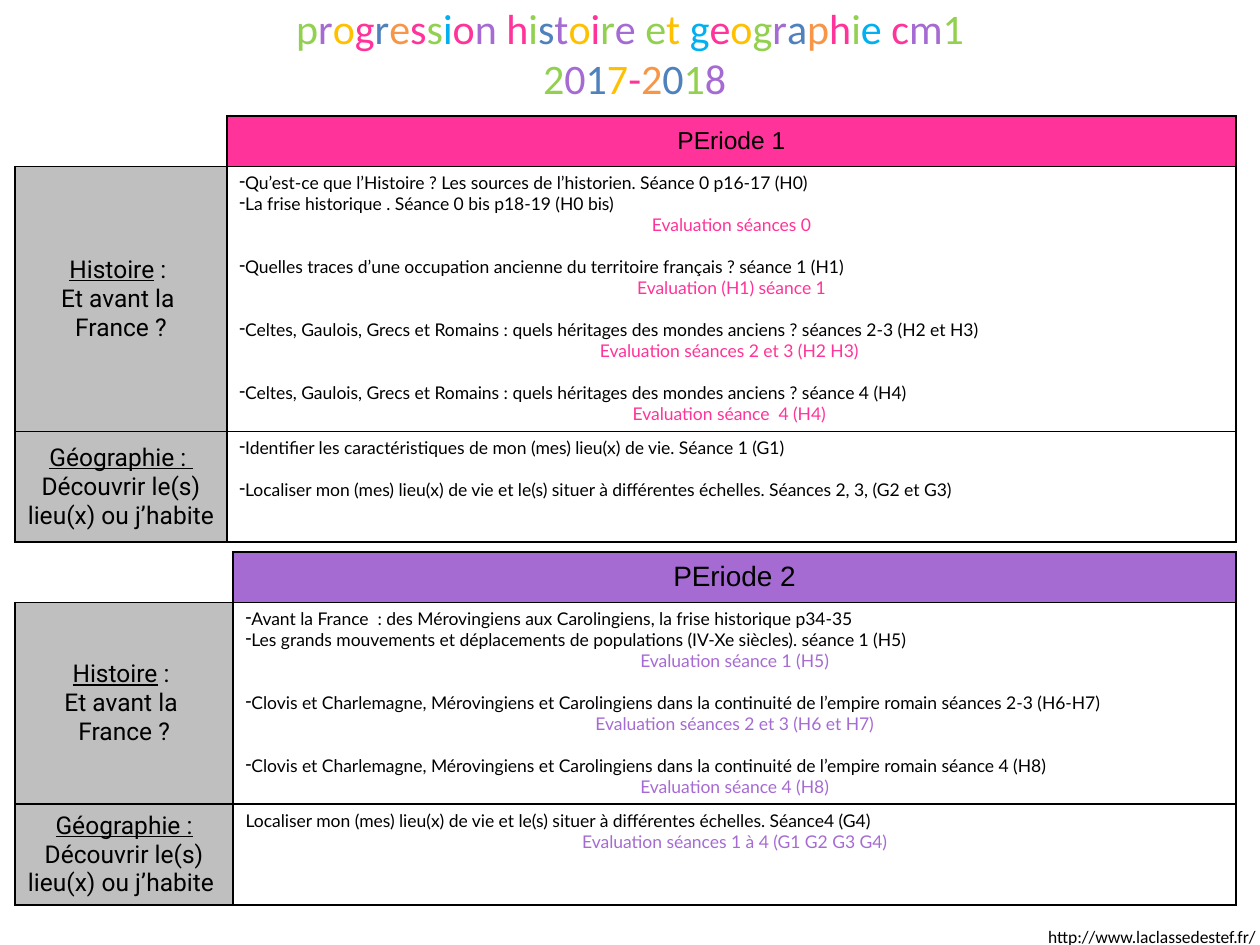
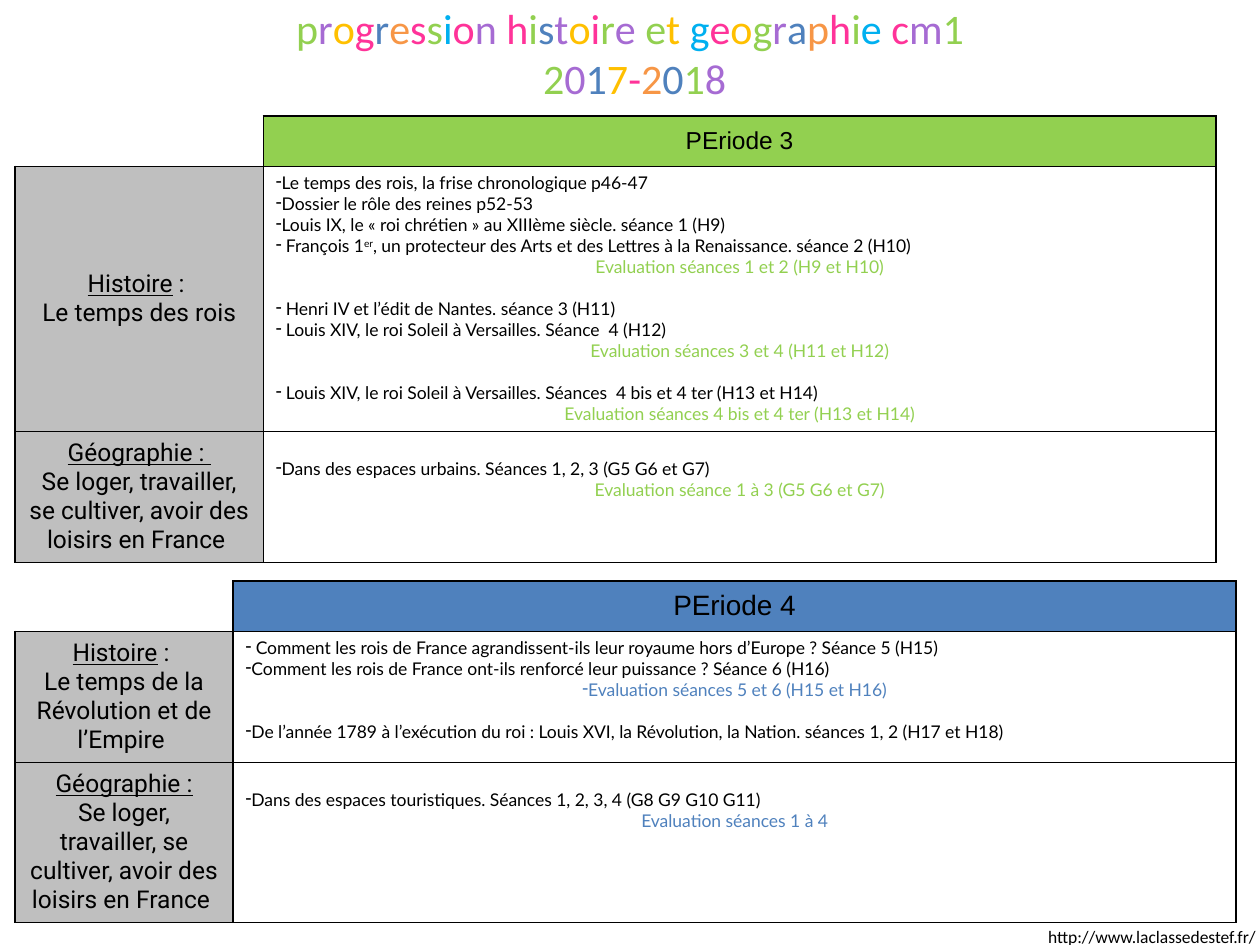
from dataclasses import dataclass

from lxml import etree
from pptx import Presentation
from pptx.dml.color import RGBColor
from pptx.enum.text import MSO_ANCHOR, PP_ALIGN
from pptx.oxml.ns import qn
from pptx.util import Emu, Inches, Pt

CENTER, LEFT = PP_ALIGN.CENTER, PP_ALIGN.LEFT
MIDDLE, TOP = MSO_ANCHOR.MIDDLE, MSO_ANCHOR.TOP

WIDTH, HEIGHT = Inches(10), Inches(7.5)
COLUMNS, ROWS = 100, 75

BLACK, GREY = "000000", "BFBFBF"
PINK, VIOLET, GREEN, BLUE = "FF3399", "A66BD3", "92D050", "4F81BD"
LETTER_COLOURS = {"P": PINK, "V": VIOLET, "G": GREEN, "B": BLUE,
                  "Y": "FFC000", "O": "F79646", "C": "00B0F0", " ": BLACK}

# Each title line with the colour code of every letter below it
TITLE = (
    ("progression histoire et geographie cm1",
     "GVYPBOPGCPV PGBVYPGV GY CPYGVBOPGC PVG"),
    (" 2017-2018",
     " GVBYPOBGV"),
)
FOOTER = "http://www.laclassedestef.fr/"

TABLE_LEFT = 1.2
HEADER_ROWS = 3.9
LESSON_SIZE = 10
LESSON_LINE = Pt(12)
CELL_MARGIN = Inches(0.05)
SIDES = "LRTB"


@dataclass
class Block:
    """Lessons followed by their evaluation; "^" surrounds superscript text."""
    lessons: tuple[str, ...]
    evaluation: str = ""


@dataclass
class Subject:
    name: str
    suffix: str
    theme: tuple[str, ...]
    rows: float
    blocks: tuple[Block, ...]
    starts_lower: bool = False


@dataclass
class Period:
    title: str
    title_size: int
    colour: str
    top: float
    columns: tuple[float, float]
    subjects: tuple[Subject, Subject]


BEFORE_FRANCE = ("Et avant la ", "France ?")
LIVING_PLACES = ("Découvrir le(s) lieu(x) ou j’habite ",)
LIVING_IN_FRANCE = ("Se loger, travailler, se cultiver, avoir des loisirs en France ",)

SLIDES = (
    (
        Period("PEriode 1", 14, PINK, 9.2, (16.8, 80.1), (
            Subject("Histoire", " : ", BEFORE_FRANCE, 21, (
                Block(("-Qu’est-ce que l’Histoire ? Les sources de l’historien. Séance 0 p16-17 (H0)",
                       "-La frise historique . Séance 0 bis p18-19 (H0 bis)"),
                      "Evaluation séances 0"),
                Block(("-Quelles traces d’une occupation ancienne du territoire français ? séance 1 (H1)",),
                      "Evaluation (H1) séance 1"),
                Block(("-Celtes, Gaulois, Grecs et Romains : quels héritages des mondes anciens ? "
                       "séances 2-3 (H2 et H3)",),
                      "Evaluation séances 2 et 3 (H2 H3) "),
                Block(("-Celtes, Gaulois, Grecs et Romains : quels héritages des mondes anciens ? "
                       "séance 4 (H4)",),
                      "Evaluation séance  4 (H4) "),
            )),
            Subject("Géographie : ", "", LIVING_PLACES, 8.8, (
                Block(("-Identifier les caractéristiques de mon (mes) lieu(x) de vie. Séance 1 (G1)",)),
                Block(("-Localiser mon (mes) lieu(x) de vie et le(s) situer à différentes échelles. "
                       "Séances 2, 3, (G2 et G3)",)),
            )),
        )),
        Period("PEriode 2", 16, VIOLET, 43.8, (17.3, 79.6), (
            Subject("Histoire", " : ", BEFORE_FRANCE, 16, (
                Block(("-Avant la France  : des Mérovingiens aux Carolingiens, la frise historique p34-35",
                       "-Les grands mouvements et déplacements de populations (IV-Xe siècles). "
                       "séance 1 (H5)"),
                      "Evaluation séance 1 (H5)"),
                Block(("-Clovis et Charlemagne, Mérovingiens et Carolingiens dans la continuité "
                       "de l’empire romain séances 2-3 (H6-H7)",),
                      "Evaluation séances 2 et 3 (H6 et H7)"),
                Block(("-Clovis et Charlemagne, Mérovingiens et Carolingiens dans la continuité "
                       "de l’empire romain séance 4 (H8)",),
                      "Evaluation séance 4 (H8)"),
            )),
            Subject("Géographie :", "", LIVING_PLACES, 8, (
                Block(("Localiser mon (mes) lieu(x) de vie et le(s) situer à différentes échelles. "
                       "Séance4 (G4)",),
                      "Evaluation séances 1 à 4 (G1 G2 G3 G4)"),
            )),
        )),
    ),
    (
        Period("PEriode 3", 14, GREEN, 9.2, (19.7, 75.6), (
            Subject("Histoire", " : ", ("Le temps des rois",), 21, (
                Block(("-Le temps des rois, la frise chronologique p46-47",
                       "-Dossier le rôle des reines p52-53",
                       "-Louis IX, le « roi chrétien » au XIIIème siècle. séance 1 (H9)",
                       "- François 1^er^, un protecteur des Arts et des Lettres à la Renaissance. "
                       "séance 2 (H10)"),
                      "Evaluation séances 1 et 2 (H9 et H10)"),
                Block(("- Henri IV et l’édit de Nantes. séance 3 (H11)",
                       "- Louis XIV, le roi Soleil à Versailles. Séance  4 (H12)"),
                      "Evaluation séances 3 et 4 (H11 et H12)"),
                Block(("- Louis XIV, le roi Soleil à Versailles. Séances  4 bis et 4 ter (H13 et H14)",),
                      "Evaluation séances 4 bis et 4 ter (H13 et H14)"),
            )),
            Subject("Géographie : ", "", LIVING_IN_FRANCE, 10.4, (
                Block(("-Dans des espaces urbains. Séances 1, 2, 3 (G5 G6 et G7)",),
                      "Evaluation séance 1 à 3 (G5 G6 et G7)"),
            ), starts_lower=True),
        )),
        Period("PEriode 4", 16, BLUE, 46.1, (17.3, 79.6), (
            Subject("Histoire", " : ", ("Le temps de la Révolution et de l’Empire ",), 10.4, (
                Block(("- Comment les rois de France agrandissent-ils leur royaume hors d’Europe ? "
                       "Séance 5 (H15)",
                       "-Comment les rois de France ont-ils renforcé leur puissance ? Séance 6 (H16)"),
                      "-Evaluation séances 5 et 6 (H15 et H16)"),
                Block(("-De l’année 1789 à l’exécution du roi : Louis XVI, la Révolution, la Nation. "
                       "séances 1, 2 (H17 et H18)",)),
            )),
            Subject("Géographie :", "", LIVING_IN_FRANCE, 12.7, (
                Block(("-Dans des espaces touristiques. Séances 1, 2, 3, 4 (G8 G9 G10 G11)",),
                      "Evaluation séances 1 à 4"),
            ), starts_lower=True),
        )),
    ),
)


def col(n: float) -> Emu:
    return Emu(round(WIDTH * n / COLUMNS))


def row(n: float) -> Emu:
    return Emu(round(HEIGHT * n / ROWS))


def rgb(colour: str) -> RGBColor:
    return RGBColor.from_string(colour)


def add_run(p, text: str, font: str, size: int, colour: str = BLACK, underline: bool = False):
    r = p.add_run()
    r.text = text
    f = r.font
    f.name, f.size, f.bold, f.underline = font, Pt(size), False, underline
    f.color.rgb = rgb(colour)
    return r


def next_paragraph(tf, first: bool, align):
    p = tf.paragraphs[0] if first else tf.add_paragraph()
    p.alignment = align
    return p


def add_text_box(s, left: float, top: float, width: float, height: float, wrap: bool):
    tf = s.shapes.add_textbox(col(left), row(top), col(width), row(height)).text_frame
    tf.word_wrap = wrap
    return tf


def add_title(s) -> None:
    tf = add_text_box(s, 0, -0.3, COLUMNS, 9.1, True)
    for i, (text, codes) in enumerate(TITLE):
        p = next_paragraph(tf, i == 0, CENTER)
        for letter, code in zip(text, codes):
            add_run(p, letter, "Calibri", 24, LETTER_COLOURS[code])


def add_footer(s) -> None:
    tf = add_text_box(s, 82.2, 73, 19, 2.7, False)
    add_run(tf.paragraphs[0], FOOTER, "Calibri", LESSON_SIZE)


def style_cell(cell, fill: str = "", anchor=TOP, borders: str = SIDES) -> None:
    """Draw a black line on the given sides, then fill the cell if a colour is given."""
    tc_pr = cell._tc.get_or_add_tcPr()
    for side in SIDES:
        ln = etree.SubElement(tc_pr, qn(f"a:ln{side}"), w=str(Pt(1)))
        if side in borders:
            solid = etree.SubElement(ln, qn("a:solidFill"))
            etree.SubElement(solid, qn("a:srgbClr"), val=BLACK)
        else:
            etree.SubElement(ln, qn("a:noFill"))
    if fill:
        cell.fill.solid()
        cell.fill.fore_color.rgb = rgb(fill)
    else:
        cell.fill.background()
    cell.vertical_anchor = anchor


def set_dash(p, hanging: bool) -> None:
    indent = Inches(0.08) if hanging else 0
    p_pr = p._p.get_or_add_pPr()
    p_pr.set("marL", str(indent))
    p_pr.set("indent", str(-indent))
    etree.SubElement(p_pr, qn("a:buChar"), char="-")


def add_line(tf, text: str, colour: str, align, first: bool, gap: bool) -> None:
    p = next_paragraph(tf, first, align)
    if text.startswith("-"):
        set_dash(p, text.startswith("- "))
        text = text[1:].lstrip()
    if gap:
        p.space_before = LESSON_LINE
    for i, part in enumerate(text.split("^")):
        r = add_run(p, part, "Lato", LESSON_SIZE, colour)
        if i % 2:
            r._r.get_or_add_rPr().set("baseline", "30000")


def fill_label(cell, subject: Subject) -> None:
    style_cell(cell, GREY, MIDDLE)
    tf = cell.text_frame
    p = next_paragraph(tf, True, CENTER)
    add_run(p, subject.name, "Roboto", 14, underline=True)
    if subject.suffix:
        add_run(p, subject.suffix, "Roboto", 14)
    for text in subject.theme:
        add_run(next_paragraph(tf, False, CENTER), text, "Roboto", 14)


def fill_lessons(cell, subject: Subject, colour: str) -> None:
    style_cell(cell)
    cell.margin_top = CELL_MARGIN + (LESSON_LINE if subject.starts_lower else 0)
    for b, block in enumerate(subject.blocks):
        for i, lesson in enumerate(block.lessons):
            add_line(cell.text_frame, lesson, BLACK, LEFT, b == i == 0, b > 0 and i == 0)
        if block.evaluation:
            add_line(cell.text_frame, block.evaluation, colour, CENTER, False, False)


def add_period(s, period: Period) -> None:
    heights = (HEADER_ROWS, *(subject.rows for subject in period.subjects))
    table = s.shapes.add_table(len(heights), 2, col(TABLE_LEFT), row(period.top),
                               col(sum(period.columns)), row(sum(heights))).table
    table.first_row = table.horz_banding = False
    for column, width in zip(table.columns, period.columns):
        column.width = col(width)
    for line, height in zip(table.rows, heights):
        line.height = row(height)

    style_cell(table.cell(0, 0), borders="RB")
    header = table.cell(0, 1)
    style_cell(header, period.colour, MIDDLE)
    p = next_paragraph(header.text_frame, True, CENTER)
    add_run(p, period.title, "Arial", period.title_size)
    for i, subject in enumerate(period.subjects, start=1):
        fill_label(table.cell(i, 0), subject)
        fill_lessons(table.cell(i, 1), subject, period.colour)


def main() -> None:
    prs = Presentation()
    prs.slide_width, prs.slide_height = WIDTH, HEIGHT
    for periods in SLIDES:
        s = prs.slides.add_slide(prs.slide_layouts[6])
        add_title(s)
        for period in periods:
            add_period(s, period)
        add_footer(s)
    prs.save("out.pptx")


if __name__ == "__main__":
    main()
